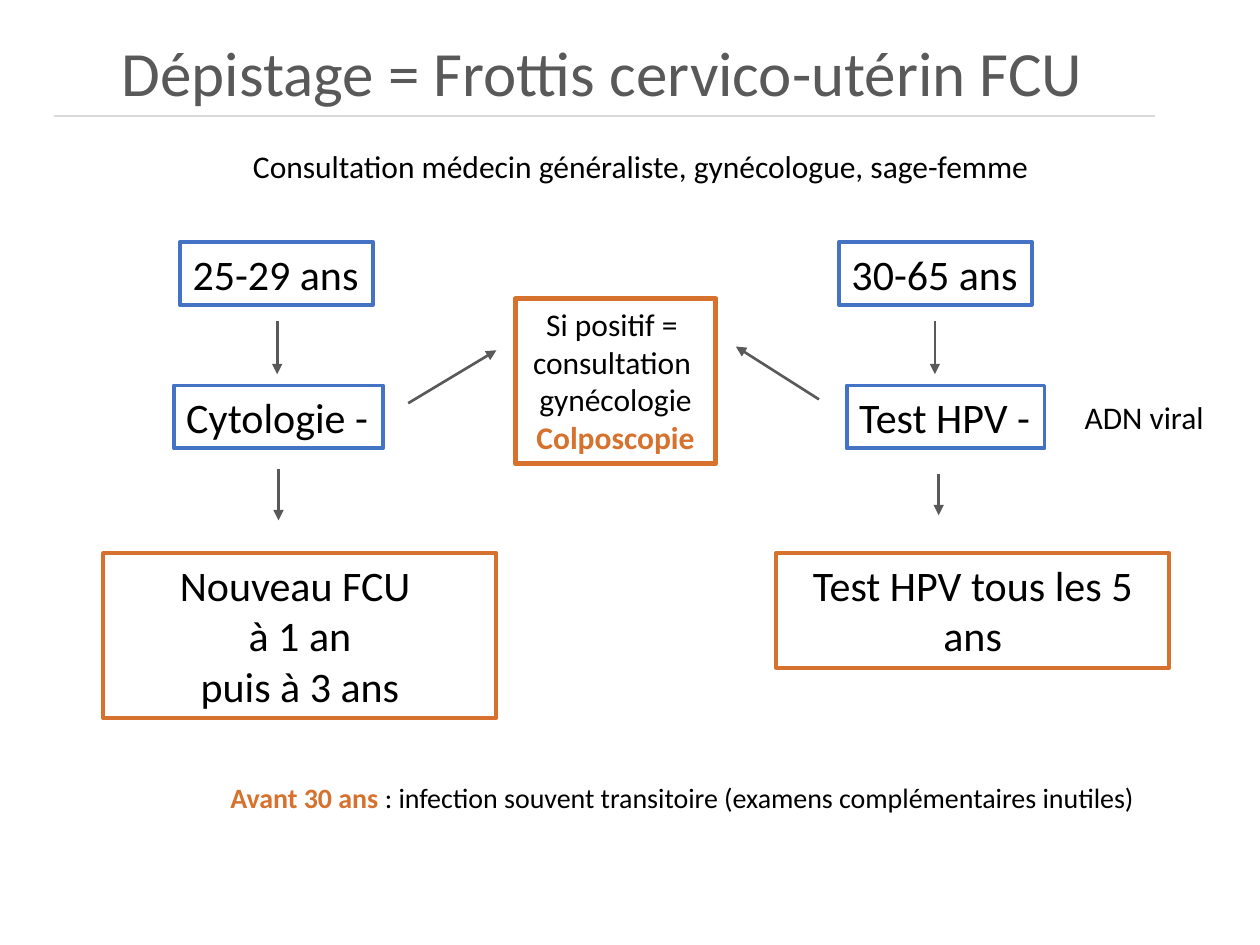
from lxml import etree
from pptx import Presentation
from pptx.dml.color import RGBColor
from pptx.enum.shapes import MSO_CONNECTOR, MSO_SHAPE
from pptx.enum.text import MSO_ANCHOR, MSO_AUTO_SIZE, PP_ALIGN
from pptx.oxml.ns import qn
from pptx.util import Inches, Pt

BLACK = RGBColor(0x00, 0x00, 0x00)
GRAY = RGBColor(0x59, 0x59, 0x59)
LIGHT_GRAY = RGBColor(0xD9, 0xD9, 0xD9)
BLUE = RGBColor(0x44, 0x72, 0xC4)
ORANGE = RGBColor(0xD6, 0x72, 0x2E)
FONT = "Calibri"
LEFT, CENTER = PP_ALIGN.LEFT, PP_ALIGN.CENTER
TOP, MIDDLE = MSO_ANCHOR.TOP, MSO_ANCHOR.MIDDLE
FIT_SHAPE, NO_FIT = MSO_AUTO_SIZE.SHAPE_TO_FIT_TEXT, MSO_AUTO_SIZE.NONE
RECTANGLE = MSO_SHAPE.RECTANGLE
STRAIGHT = MSO_CONNECTOR.STRAIGHT

AGE_BOXES = [("25-29 ans", 1.43, 1.92, 1.53), ("30-65 ans", 6.66, 1.92, 1.53)]
TEST_BOXES = [("Cytologie -", 1.38, 3.06, 1.66), ("Test HPV -", 6.72, 3.06, 1.57)]
ARROWS = [
    (2.2, 2.55, 2.2, 2.97),
    (7.42, 2.55, 7.42, 2.97),
    (2.21, 3.72, 2.21, 4.13),
    (7.45, 3.76, 7.45, 4.09),
    (3.24, 3.2, 3.94, 2.78),
    (6.5, 3.17, 5.84, 2.75),
]


def style_font(font, size, color, bold=False):
    font.name = FONT
    font.size = Pt(size)
    font.color.rgb = color
    font.bold = bold


def write_lines(shape, lines, size, alignment=LEFT, wrap=True, fit=FIT_SHAPE):
    frame = shape.text_frame
    frame.word_wrap = wrap
    frame.auto_size = fit
    frame.vertical_anchor = TOP
    frame.text = "\n".join(lines)
    for paragraph in frame.paragraphs:
        paragraph.alignment = alignment
        style_font(paragraph.font, size, BLACK)


def add_title(slide, text):
    title = slide.shapes.title
    title.left, title.top = Inches(0.28), Inches(0.13)
    title.width, title.height = Inches(9), Inches(0.87)
    frame = title.text_frame
    frame.text = text
    frame.auto_size = NO_FIT
    frame.vertical_anchor = MIDDLE
    paragraph = frame.paragraphs[0]
    paragraph.alignment = CENTER
    style_font(paragraph.font, 36, GRAY)


def add_box(slide, lines, left, top, width, height, color,
            size=24, line_width=2.25, alignment=CENTER, wrap=True):
    box = slide.shapes.add_shape(
        RECTANGLE, Inches(left), Inches(top), Inches(width), Inches(height))
    box.shadow.inherit = False
    box.fill.background()
    box.line.color.rgb = color
    box.line.width = Pt(line_width)
    write_lines(box, lines, size, alignment, wrap)
    return box


def add_label(slide, text, left, top, width):
    label = slide.shapes.add_textbox(
        Inches(left), Inches(top), Inches(width), Inches(0.4))
    write_lines(label, [text], 18, wrap=False)


def add_line(slide, start_x, start_y, end_x, end_y, color, arrow=False):
    line = slide.shapes.add_connector(
        STRAIGHT, Inches(start_x), Inches(start_y), Inches(end_x), Inches(end_y))
    line.line.color.rgb = color
    line.line.width = Pt(1.5)
    properties = line._element.spPr
    if arrow:
        outline = properties.find(qn("a:ln"))
        etree.SubElement(outline, qn("a:tailEnd"), type="triangle")
    etree.SubElement(properties, qn("a:effectLst"))


def add_footnote(slide, highlight, text):
    note = slide.shapes.add_textbox(
        Inches(1.73), Inches(6.09), Inches(8.62), Inches(1.41))
    write_lines(note, [highlight], 16, fit=NO_FIT)
    paragraph = note.text_frame.paragraphs[0]
    paragraph.line_spacing = 1.2
    style_font(paragraph.runs[0].font, 16, ORANGE, True)
    paragraph.add_run().text = text


def main():
    presentation = Presentation()
    presentation.slide_width = Inches(10)
    presentation.slide_height = Inches(7.5)
    slide = presentation.slides.add_slide(presentation.slide_layouts[5])

    add_title(slide, "Dépistage = Frottis cervico-utérin FCU")
    add_line(slide, 0.43, 0.92, 9.17, 0.92, LIGHT_GRAY)
    add_label(slide, "Consultation médecin généraliste, gynécologue, sage-femme",
              1.91, 1.12, 6.43)

    for text, left, top, width in AGE_BOXES + TEST_BOXES:
        add_box(slide, [text], left, top, width, 0.5, BLUE, alignment=LEFT, wrap=False)
    add_label(slide, "ADN viral", 8.51, 3.11, 1.16)

    add_box(slide, ["Nouveau FCU ", "à 1 an", "puis à 3 ans"],
            0.82, 4.39, 3.12, 1.31, ORANGE)
    add_box(slide, ["Test HPV tous les 5 ans"], 6.16, 4.39, 3.12, 0.91, ORANGE)
    referral = add_box(
        slide, ["Si positif = ", "consultation ", "gynécologie", "Colposcopie"],
        4.09, 2.37, 1.59, 1.31, ORANGE, size=18, line_width=3)
    style_font(referral.text_frame.paragraphs[-1].font, 18, ORANGE, True)

    for arrow in ARROWS:
        add_line(slide, *arrow, GRAY, arrow=True)

    add_footnote(slide, "Avant 30 ans ",
                 ": infection souvent transitoire (examens complémentaires inutiles)")
    presentation.save("out.pptx")


if __name__ == "__main__":
    main()
